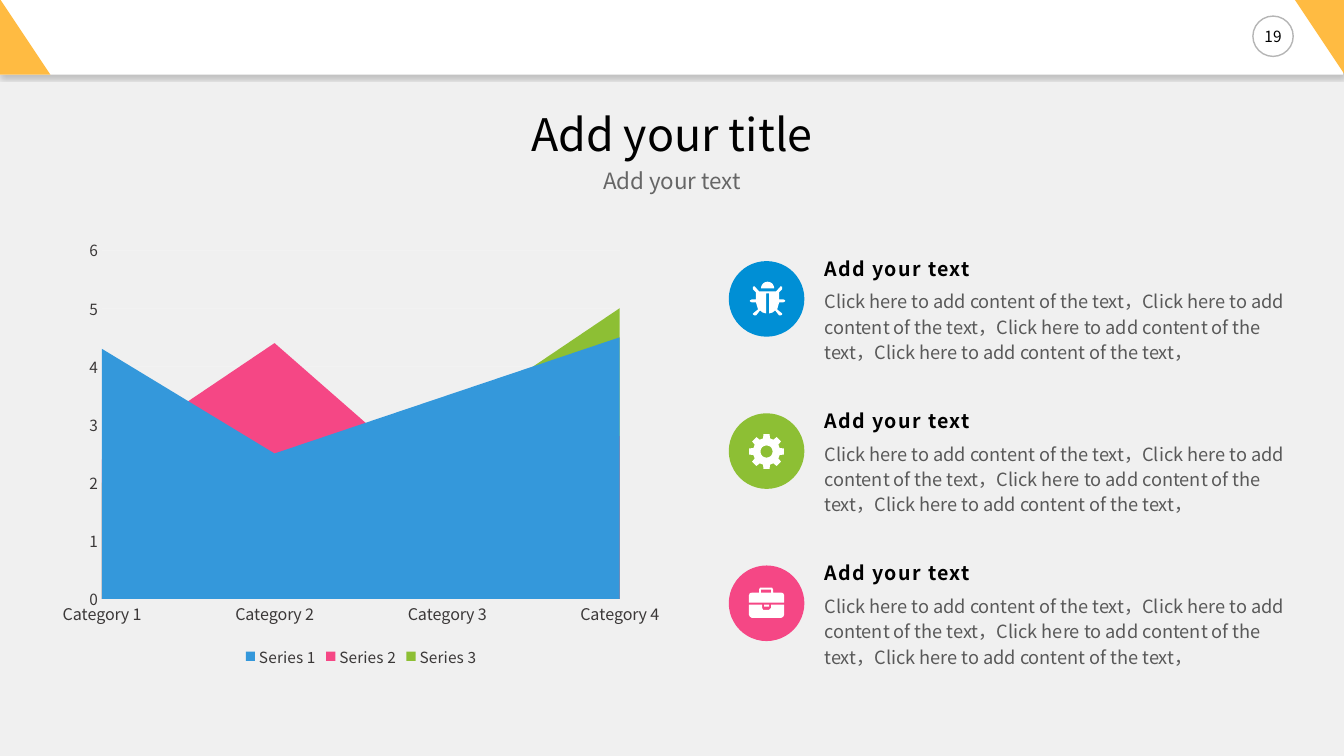
import math

import pptx
import pptx.chart.data
import pptx.dml.color
import pptx.enum.chart
import pptx.enum.shapes
import pptx.enum.text
import pptx.oxml
import pptx.oxml.ns
import pptx.util

# The slide is a grid of 160 columns by 90 rows, with square cells
CELL = pptx.util.Inches(1) / 12
FONT = "Noto Sans CJK JP"
SHAPES = pptx.enum.shapes.MSO_SHAPE
MIDDLE = pptx.enum.text.MSO_ANCHOR.MIDDLE
TOP = pptx.enum.text.MSO_ANCHOR.TOP
CENTER = pptx.enum.text.PP_ALIGN.CENTER
LEFT = pptx.enum.text.PP_ALIGN.LEFT
NAMESPACES = pptx.oxml.ns.nsdecls("a", "c")

BLUE, PINK, GREEN, AMBER = "008FD5", "F54785", "8DBF34", "FFBB42"
CATEGORIES = ["Category 1", "Category 2", "Category 3", "Category 4"]
SERIES = [
    ("Series 1", (4.3, 2.5, 3.5, 4.5), "3498DB"),
    ("Series 2", (2.4, 4.4, 1.8, 2.8), PINK),
    ("Series 3", (2, 2, 3, 5), GREEN),
]
DETAIL = "Click here to add content of the text，" * 4


def grid(*cells):
    return [round(cell * CELL) for cell in cells]


def color(target, code):
    target.rgb = pptx.dml.color.RGBColor.from_string(code)


def paint(fill, code):
    fill.solid()
    color(fill.fore_color, code)


def style_font(font, size, code):
    font.name = FONT
    font.size = pptx.util.Pt(size)
    color(font.color, code)


def write(frame, text, size, code, align=LEFT, anchor=TOP, spacing=0.9):
    frame.margin_left = frame.margin_right = frame.margin_top = frame.margin_bottom = 0
    frame.word_wrap = True
    frame.auto_size = pptx.enum.text.MSO_AUTO_SIZE.NONE
    frame.vertical_anchor = anchor
    frame.text = text
    paragraph = frame.paragraphs[0]
    paragraph.alignment = align
    paragraph.line_spacing = spacing
    style_font(paragraph.font, size, code)
    return paragraph


def add_label(slide, cells, *args, **options):
    return write(slide.shapes.add_textbox(*grid(*cells)).text_frame, *args, **options)


def add_block(shapes, kind, cells, code):
    block = shapes.add_shape(kind, *grid(*cells))
    block.shadow.inherit = False
    paint(block.fill, code)
    block.line.fill.background()
    return block


# Icon outlines, in hundredths of an inch from the disc's corner
def arc(x, y, radius, start, end):
    return [(x + radius * math.cos(math.radians(a)), y + radius * math.sin(math.radians(a)))
            for a in range(start, end, 10)]


def bug_outlines():
    half = [(1.5, 32), (1.5, 52), (5, 51), (7.5, 49), (11.5, 54), (13, 54), (14.5, 53),
            (14.5, 52), (9.5, 48), (11.5, 41), (15.5, 41), (17.5, 40), (17.5, 39),
            (15.5, 38), (11.5, 38), (11.5, 31), (14.5, 28), (14.5, 25.5), (13, 25), (8.5, 30)]
    body = [(38.5 + x, y) for x, y in half] + [(38.5 - x, y) for x, y in reversed(half)]
    return [body, arc(38.5, 27, 6.5, 180, 370)]


def gear_outlines():
    rim = []
    for tooth in range(8):
        for offset, radius in ((-15, 13.5), (-10, 17.5), (10, 17.5), (15, 13.5)):
            angle = math.radians(tooth * 45 + offset)
            rim.append((37.5 + radius * math.cos(angle), 38 + radius * math.sin(angle)))
    return [rim, arc(37.5, 38, 6, 0, 360)]


def briefcase_outlines():
    lid = [(20, 37), (20, 29.5), (21, 27.5), (23, 27), (30, 27), (30, 24), (31, 22), (43, 22),
           (44, 24), (44, 27), (52, 27), (54, 27.5), (55, 29.5), (55, 37)]
    base = [(20, 39), (33, 39), (33, 42), (34, 44), (40, 44), (42, 42), (42, 39), (55, 39),
            (55, 49), (54, 51), (52, 52), (23, 52), (21, 51), (20, 49)]
    handle = [(32, 24), (42, 24), (42, 27), (32, 27)]
    clasp = [(35, 39), (40, 39), (40, 41), (35, 41)]
    return [lid, handle, base, clasp]


def add_icon(slide, left, top, code, outlines):
    badge = slide.shapes.add_group_shape().shapes
    add_block(badge, SHAPES.OVAL, (left, top, 9, 9), code)
    outlines = [[(x * 10, y * 10) for x, y in outline] for outline in outlines]
    builder = badge.build_freeform(*outlines[0][0], scale=pptx.util.Inches(1) / 1000)
    for number, outline in enumerate(outlines):
        if number:
            builder.move_to(*outline[0])
        builder.add_line_segments(outline[1:], close=True)
    symbol = builder.convert_to_shape(*grid(left, top))
    symbol.shadow.inherit = False
    paint(symbol.fill, "FFFFFF")
    symbol.line.fill.background()


def add_header(slide):
    band = add_block(slide.shapes, SHAPES.RECTANGLE, (-0.12, -0.12, 160, 9), "FFFFFF")
    effects = band._element.spPr.find(pptx.oxml.ns.qn("a:effectLst"))
    effects.append(pptx.oxml.parse_xml(
        f'<a:outerShdw {NAMESPACES} blurRad="38100" dist="25400" dir="5400000">'
        '<a:srgbClr val="000000"><a:alpha val="20000"/></a:srgbClr></a:outerShdw>'))

    page = add_block(slide.shapes, SHAPES.OVAL, (149.16, 1.92, 4.8, 4.8), "FFFFFF")
    paint(page.line.fill, "0D0D0D")
    page.line.width = pptx.util.Pt(1)
    line_color = page.line._ln.find(".//" + pptx.oxml.ns.qn("a:srgbClr"))
    line_color.append(pptx.oxml.parse_xml(f'<a:alpha {NAMESPACES} val="30000"/>'))
    write(page.text_frame, "19", 11, "000000", CENTER, MIDDLE, 1.0)

    add_block(slide.shapes, SHAPES.RIGHT_TRIANGLE, (0, -0.12, 6, 9), AMBER)
    corner = add_block(slide.shapes, SHAPES.RIGHT_TRIANGLE, (154, -0.24, 6, 9), AMBER)
    corner.rotation = 180


def add_titles(slide):
    title = slide.shapes.title
    title.left, title.top, title.width, title.height = grid(6, 13.08, 148, 6.48)
    write(title.text_frame, "Add your title", 32, "000000", CENTER, MIDDLE)
    add_label(slide, (6, 20.04, 148, 3.24), "Add your text", 16, "666666", CENTER, MIDDLE)


def style_axis(axis, size):
    axis.major_tick_mark = axis.minor_tick_mark = pptx.enum.chart.XL_TICK_MARK.NONE
    style_font(axis.tick_labels.font, size, "3B3838")


def add_area_chart(slide):
    data = pptx.chart.data.CategoryChartData()
    data.categories = CATEGORIES
    for name, values, _ in SERIES:
        data.add_series(name, values)
    chart = slide.shapes.add_chart(
        pptx.enum.chart.XL_CHART_TYPE.AREA, *grid(6, 27.36, 74, 52.56), data).chart
    chart.has_title = False
    style_font(chart.font, 10, "3B3838")
    chart.font.name = "Manrope"
    for series, (_, _, code) in zip(chart.plots[0].series, SERIES):
        paint(series.format.fill, code)

    style_axis(chart.category_axis, 11.5)
    paint(chart.category_axis.format.line.fill, "D9D9D9")
    chart.category_axis.format.line.width = pptx.util.Pt(0.75)
    values = chart.value_axis
    style_axis(values, 11)
    values.minimum_scale, values.maximum_scale, values.major_unit = 0, 6, 1
    values.format.line.fill.background()
    values.has_major_gridlines = True
    paint(values.major_gridlines.format.line.fill, "F2F2F2")
    values.major_gridlines.format.line.width = pptx.util.Pt(0.75)

    chart.has_legend = True
    chart.legend.position = pptx.enum.chart.XL_LEGEND_POSITION.BOTTOM
    chart.legend.include_in_layout = False
    style_font(chart.legend.font, 11, "3B3838")

    # Areas reach both edges of a fixed plot frame
    for crossing in chart._chartSpace.iter(pptx.oxml.ns.qn("c:crossBetween")):
        crossing.set("val", "midCat")
    plot_area = chart._chartSpace.chart.plotArea
    for layout in plot_area.findall(pptx.oxml.ns.qn("c:layout")):
        plot_area.remove(layout)
    shares = "".join(f'<c:{key} val="{share}"/>' for key, share in
                     (("x", 0.083), ("y", 0.046), ("w", 0.833), ("h", 0.79)))
    plot_area.insert(0, pptx.oxml.parse_xml(
        f'<c:layout {NAMESPACES}><c:manualLayout><c:layoutTarget val="inner"/>'
        f'<c:xMode val="edge"/><c:yMode val="edge"/>{shares}</c:manualLayout></c:layout>'))


def add_point(slide, top, code, outlines):
    add_icon(slide, 86.76, top + 0.24, code, outlines)
    heading = add_label(slide, (98.16, top, 56.4, 4.2), "Add your text", 14, "000000")
    heading.font.bold = True
    heading._p.get_or_add_pPr().get_or_add_defRPr().set("spc", "100")
    add_label(slide, (98.16, top + 3.36, 56.4, 10.92), DETAIL, 13, "595959", spacing=1.16)


def main():
    deck = pptx.Presentation()
    deck.slide_width, deck.slide_height = grid(160, 90)
    slide = deck.slides.add_slide(deck.slide_layouts[5])
    paint(slide.background.fill, "F0F0F0")
    add_header(slide)
    add_titles(slide)
    add_area_chart(slide)
    points = ((BLUE, bug_outlines()), (GREEN, gear_outlines()), (PINK, briefcase_outlines()))
    for row, (code, outlines) in enumerate(points):
        add_point(slide, 30.84 + row * 18.12, code, outlines)
    deck.save("out.pptx")


if __name__ == "__main__":
    main()
